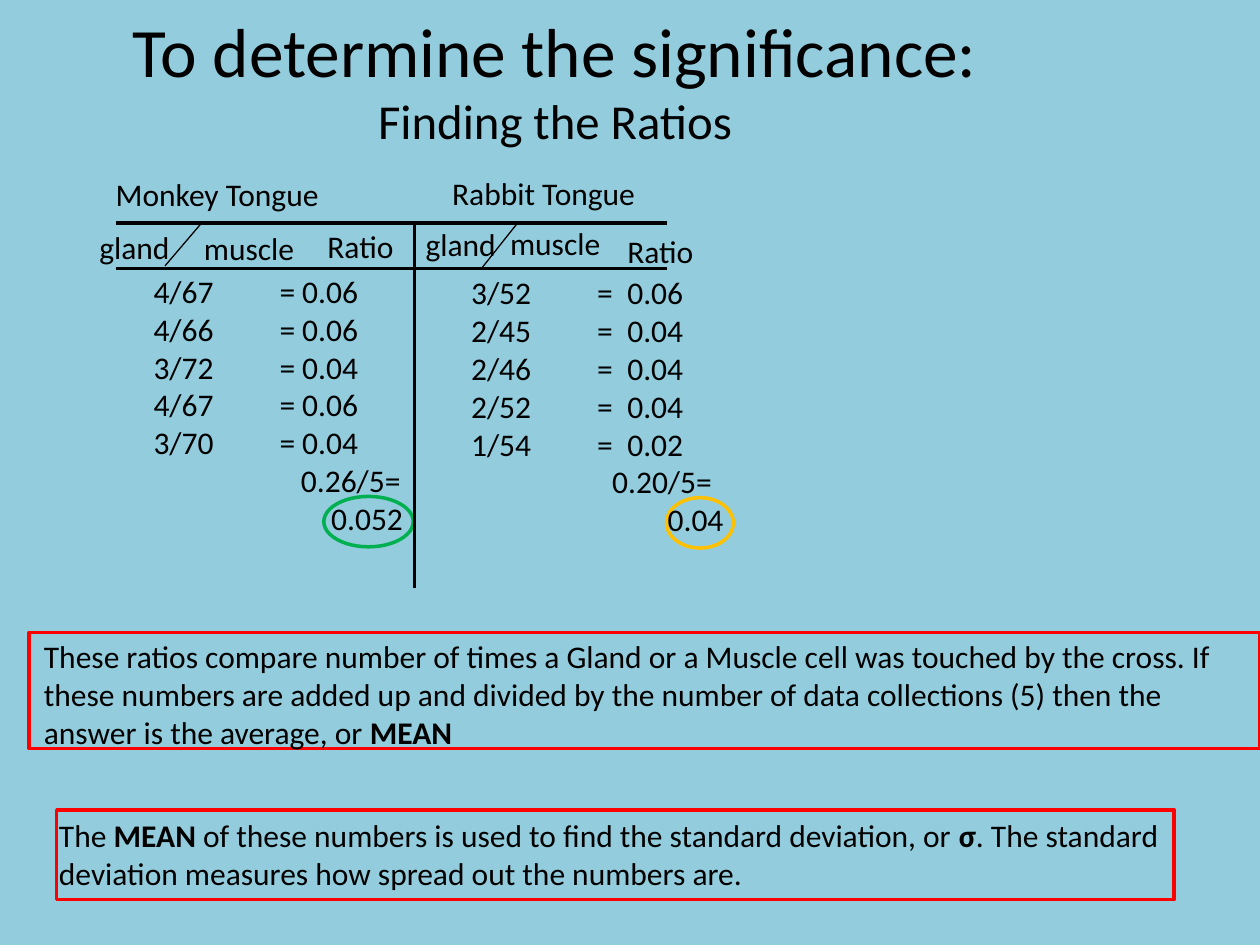
from pptx import Presentation
from pptx.dml.color import RGBColor
from pptx.enum.shapes import MSO_CONNECTOR as CONN, MSO_SHAPE as SHAPE
from pptx.enum.text import MSO_ANCHOR as ANCHOR, PP_ALIGN as ALIGN
from pptx.oxml.ns import qn
from pptx.util import Inches, Pt
from lxml.etree import SubElement

COLORS = {"bg": "93CDDD", "ink": "000000", "red": "FF0000",
          "green": "00B050", "amber": "FFC000"}


class SlideBuilder:
    """Holds the style and the slide, and adds each kind of element."""

    font, size = "Calibri", 18

    def __init__(self, prs):
        self.s = prs.slides.add_slide(prs.slide_layouts[6])
        fill = self.s.background.fill
        fill.solid()
        fill.fore_color.rgb = self.color("bg")

    def color(self, name):
        return RGBColor.from_string(COLORS[name])

    def run(self, p, text, size=None, bold=False):
        r = p.add_run()
        r.text = text
        r.font.name, r.font.size = self.font, Pt(size or self.size)
        r.font.bold = bold
        r.font.color.rgb = self.color("ink")

    def box(self, x, y, w, h):
        sp = self.s.shapes.add_textbox(*map(Inches, (x, y, w, h)))
        sp.text_frame.word_wrap = True
        return sp.text_frame

    def title(self, x, y, w, h, lines):
        tf = self.box(x, y, w, h)
        tf.vertical_anchor = ANCHOR.MIDDLE
        p = tf.paragraphs[0]
        p.alignment = ALIGN.CENTER
        for i, (text, size) in enumerate(lines):
            if i:
                p.add_line_break()
            self.run(p, text, size)

    def text(self, x, y, w, h, *parts):
        p = self.box(x, y, w, h).paragraphs[0]
        for i, part in enumerate(parts):
            self.run(p, part, bold=i % 2 == 1)

    def ratios(self, x, y, w, h, rows, value_tab, results):
        tf = self.box(x, y, w, h)
        lines = [(f"{ratio}\t=\t{value}", 0) for ratio, value in rows] + results
        for i, (text, indent) in enumerate(lines):
            p = tf.paragraphs[0] if i == 0 else tf.add_paragraph()
            pPr = p._p.get_or_add_pPr()
            if indent:
                pPr.set("marL", str(Inches(indent)))
            else:
                tabs = SubElement(pPr, qn("a:tabLst"))
                for pos in (1, value_tab):
                    SubElement(tabs, qn("a:tab"), pos=str(Inches(pos)), algn="l")
            self.run(p, text)

    def outline(self, kind, x, y, w, h, color):
        sp = self.s.shapes.add_shape(kind, *map(Inches, (x, y, w, h)))
        sp.shadow.inherit = False
        sp.fill.background()
        sp.line.color.rgb = self.color(color)
        sp.line.width = Pt(2)

    def line(self, x1, y1, x2, y2, width=1.75):
        c = self.s.shapes.add_connector(
            CONN.STRAIGHT, *map(Inches, (x1, y1, x2, y2)))
        c.line.color.rgb = self.color("ink")
        c.line.width = Pt(width)
        SubElement(c._element.spPr, qn("a:effectLst"))


def main():
    prs = Presentation()
    prs.slide_width, prs.slide_height = Inches(10), Inches(7.5)
    b = SlideBuilder(prs)

    b.title(-0.49, 0, 9.79, 1.25, [("To determine the significance:", 39.6),
                                   ("Finding the Ratios", 27.9)])

    b.outline(SHAPE.RECTANGLE, 0.23, 5.02, 9.77, 0.92, "red")
    b.text(0.25, 5.01, 9.75, 1.01,
           "These ratios compare number of times a Gland or a Muscle cell was "
           "touched by the cross. If these numbers are added up and divided by "
           "the number of data collections (5) then the answer is the average, or ",
           "MEAN")
    b.text(0.37, 6.43, 9.6, 0.71,
           "The ", "MEAN",
           " of these numbers is used to find the standard deviation, or ", "σ",
           ". The standard deviation measures how spread out the numbers are.")
    b.outline(SHAPE.RECTANGLE, 0.45, 6.43, 8.87, 0.71, "red")

    b.outline(SHAPE.OVAL, 2.57, 3.94, 0.71, 0.4, "green")
    b.outline(SHAPE.OVAL, 5.29, 3.95, 0.53, 0.4, "amber")

    for y in (1.77, 2.13):
        b.line(0.92, y, 5.29, y)
    b.line(3.29, 1.76, 3.29, 4.67)
    b.line(1.6, 1.77, 1.31, 2.11, 0.75)
    b.line(4.1, 1.78, 3.83, 2.12, 0.75)

    for label, x, y, w in [
        ("Monkey Tongue", 0.82, 1.34, 2), ("Rabbit Tongue", 3.49, 1.33, 2.79),
        ("gland", 0.69, 1.76, 0.87), ("gland", 3.28, 1.74, 1.04),
        ("muscle", 1.52, 1.77, 0.98), ("muscle", 3.95, 1.73, 0.93),
        ("Ratio", 2.5, 1.75, 0.89), ("Ratio", 4.88, 1.79, 0.89),
    ]:
        b.text(x, y, w, 0.4, label)

    b.ratios(1.12, 2.11, 2.41, 2.22,
             [("4/67", "0.06"), ("4/66", "0.06"), ("3/72", "0.04"),
              ("4/67", "0.06"), ("3/70", "0.04")],
             1.18, [("0.26/5=", 1.17), ("0.052", 1.41)])
    b.ratios(3.64, 2.12, 2.39, 2.22,
             [("3/52", "0.06"), ("2/45", "0.04"), ("2/46", "0.04"),
              ("2/52", "0.04"), ("1/54", "0.02")],
             1.24, [("0.20/5=", 1.12), ("0.04", 1.56)])

    prs.save("out.pptx")


if __name__ == "__main__":
    main()
